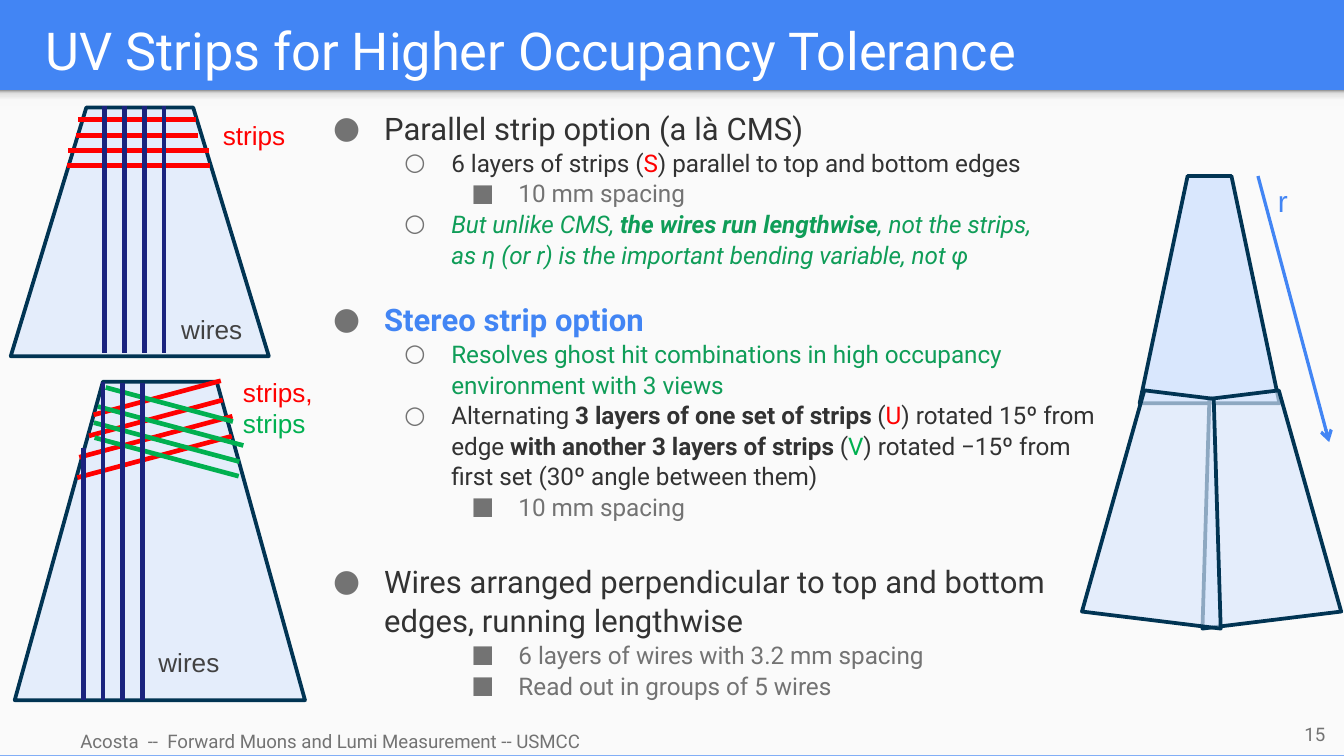
import math

import pptx
import pptx.dml.color
import pptx.enum.shapes
import pptx.enum.text
import pptx.oxml
import pptx.oxml.ns
import pptx.util
from lxml import etree
from pptx.util import Inches

COLOURS = {
    "blue": "4285F4", "paper": "FAFAFA", "white": "FFFFFF", "grey": "737373",
    "text": "323232", "label": "424242", "red": "FF0000", "green": "0F9D58",
    "strip_green": "00B050", "navy": "1A237E", "outline": "013453", "panel": "D9E7FD",
}
SHADOW_STOPS = [(0, "F9F9F9"), (36, "F9F9F9"), (80, "DEDEDE"), (100, "999999")]
SHAPES = pptx.enum.shapes.MSO_SHAPE
ANCHORS = pptx.enum.text.MSO_ANCHOR
BULLETS = [("●", 0.5, -0.38, 16.65), ("○", 1, -0.35, 13), ("■", 1.5, -0.35, 13)]

# Each point: level, space before in points, spans of text with their format
POINTS = [
    (0, 0, [("Parallel strip option (a là CMS)", {})]),
    (1, 0, [("6 layers of strips (", {}), ("S", {"colour": "red"}),
            (") parallel to top and bottom edges", {})]),
    (2, 0, [("10 mm spacing", {"colour": "grey"})]),
    (1, 0, [("But unlike CMS, ", {"colour": "green", "italic": True}),
            ("the wires run lengthwise", {"colour": "green", "italic": True, "bold": True}),
            (", not the strips, \nas η (or r) is the important bending variable, not φ",
             {"colour": "green", "italic": True})]),
    (0, 16, [("Stereo strip option", {"colour": "blue", "bold": True})]),
    (1, 0, [("Resolves ghost hit combinations in high occupancy environment with 3 views",
             {"colour": "green"})]),
    (1, 0, [("Alternating ", {}), ("3 layers of one set of strips ", {"bold": True}),
            ("(", {}), ("U", {"colour": "red"}), (") rotated 15º from edge ", {}),
            ("with another 3 layers of strips ", {"bold": True}),
            ("(", {}), ("V", {"colour": "strip_green"}),
            (") rotated −15º from first set (30º angle between them)", {})]),
    (2, 0, [("10 mm spacing", {"colour": "grey"})]),
    (0, 21, [("Wires arranged perpendicular to top and bottom edges, running lengthwise", {})]),
    (2, 0, [("6 layers of wires with 3.2 mm spacing", {"colour": "grey"})]),
    (2, 0, [("Read out in groups of 5 wires", {"colour": "grey"})]),
]


def rgb(name):
    return pptx.dml.color.RGBColor.from_string(COLOURS[name])


def add_text(para, text, size=14, colour="text", font="Roboto", bold=False, italic=False):
    for index, line in enumerate(text.split("\n")):
        if index:
            para.add_line_break()
        span = para.add_run()
        span.text = line
        span.font.name, span.font.size = font, pptx.util.Pt(size)
        span.font.bold, span.font.italic = bold, italic
        span.font.color.rgb = rgb(colour)


def set_frame(frame, margin=0.1, anchor=ANCHORS.TOP):
    frame.word_wrap = True
    frame.auto_size = pptx.enum.text.MSO_AUTO_SIZE.NONE
    frame.vertical_anchor = anchor
    frame.margin_left = frame.margin_right = Inches(0.1)
    frame.margin_top = frame.margin_bottom = Inches(margin)
    return frame.paragraphs[0]


def add_box(page, box, spans, margin=0.1, anchor=ANCHORS.TOP, align=None):
    shape = page.shapes.add_textbox(*map(Inches, box))
    para = set_frame(shape.text_frame, margin, anchor)
    para.alignment = align
    for text, style in spans:
        add_text(para, text, **style)


def add_label(page, box, *spans, size=14):
    add_box(page, box, [(text, {"colour": colour, "font": "Arial", "size": size})
                        for text, colour in spans], margin=0.05)


def add_block(page, kind, box):
    shape = page.shapes.add_shape(kind, *map(Inches, box))
    shape.shadow.inherit = False
    return shape


def add_line(page, start, end, colour, width=2.5):
    line = page.shapes.add_connector(pptx.enum.shapes.MSO_CONNECTOR.STRAIGHT,
                                     *map(Inches, (*start, *end)))
    line.line.color.rgb = rgb(colour)
    line.line.width = pptx.util.Pt(width)
    etree.SubElement(line._element.spPr, pptx.oxml.ns.qn("a:effectLst"))
    return line


def add_panel(page, box, taper=0.25, opacity=65, turn=0):
    panel = add_block(page, SHAPES.TRAPEZOID, box)
    panel.adjustments[0] = taper
    panel.rotation = turn
    panel.fill.solid()
    panel.fill.fore_color.rgb = rgb("panel")
    panel.line.color.rgb = rgb("outline")
    panel.line.width = pptx.util.Pt(2)
    colour = panel._element.spPr.find(".//" + pptx.oxml.ns.qn("a:srgbClr"))
    etree.SubElement(colour, pptx.oxml.ns.qn("a:alpha"), val=str(opacity * 1000))


def add_strips(page, box, strips, colour, angle=0):
    """Draw strips given as centre x, centre y and length, tilted clockwise by angle."""
    for x, y, length in strips:
        across = length / 2 * math.cos(math.radians(angle))
        down = length / 2 * math.sin(math.radians(angle))
        x, y = box[0] + x, box[1] + y
        add_line(page, (x - across, y - down), (x + across, y + down), colour)


def add_wires(page, box, first, last, tops, bottom):
    gap = (last - first) / (len(tops) - 1)
    for index, top in enumerate(tops):
        x = box[0] + first + index * gap
        add_line(page, (x, box[1] + top), (x, box[1] + bottom), "navy")


def add_parallel_chamber(page, box):
    left, top = box[:2]
    add_panel(page, box, taper=0.304)
    add_strips(page, box, [(0.94, 0.09, 0.88), (0.94, 0.21, 0.91),
                           (0.95, 0.32, 1.05), (0.95, 0.43, 1.06)], "red")
    add_wires(page, box, 0.7, 1.14, [-0.01] * 4, 1.83)
    add_label(page, (left + 1.48, top + 0.04, 0.72, 0.34), ("strips", "red"))
    add_label(page, (left + 1.17, top + 1.48, 0.72, 0.34), ("wires", "label"))


def add_stereo_chamber(page, box):
    left, top = box[:2]
    add_panel(page, box, taper=0.304)
    add_strips(page, box, [(1.06, 0.12, 0.98), (1.05, 0.27, 1.03),
                           (1.05, 0.41, 1.18), (1.04, 0.56, 1.19)], "red", -15)
    add_strips(page, box, [(1.15, 0.17, 0.98), (1.16, 0.33, 1.12),
                           (1.13, 0.45, 1.12), (1.13, 0.56, 1.11)], "strip_green", 15)
    add_wires(page, box, 0.51, 0.95, [0.49, 0, 0.01, 0.01], 2.37)
    add_label(page, (left + 1.6, top - 0.09, 0.83, 0.57),
              ("strips, ", "red"), ("strips", "strip_green"))
    add_label(page, (left + 0.97, top + 1.92, 0.72, 0.34), ("wires", "label"))


def add_sector(page, box):
    """Draw one inner panel, two tilted outer panels and the radial arrow."""
    left, top = box[:2]
    width, height = 1.04, 1.69
    add_panel(page, (left + 0.33, top, width, height), taper=0.343, opacity=100)
    add_panel(page, (left + 0.69, top + 1.62, width, height), turn=-7)
    add_panel(page, (left, top + 1.62, width, height), turn=7)
    arrow = add_line(page, (left + 1.21, top), (left + 1.74, top + 1.98), "blue", 1.75)
    outline = arrow.line._get_or_add_ln()
    etree.SubElement(outline, pptx.oxml.ns.qn("a:tailEnd"), type="arrow")
    add_label(page, (left + 1.26, top, 0.21, 0.37), ("r", "blue"), size=16)


def add_points(page, box):
    frame = page.shapes.add_textbox(*map(Inches, box)).text_frame
    para = set_frame(frame)
    for index, (level, before, spans) in enumerate(POINTS):
        if index:
            para = frame.add_paragraph()
        mark, indent, hang, size = BULLETS[level]
        para.level, para.line_spacing = level, 1.05
        para.space_before = pptx.util.Pt(before)
        props = para._p.get_or_add_pPr()
        props.set("marL", str(Inches(indent)))
        props.set("indent", str(Inches(hang)))
        tint = etree.SubElement(props, pptx.oxml.ns.qn("a:buClr"))
        etree.SubElement(tint, pptx.oxml.ns.qn("a:srgbClr"), val=COLOURS["grey"])
        etree.SubElement(props, pptx.oxml.ns.qn("a:buFont"), typeface="Roboto")
        etree.SubElement(props, pptx.oxml.ns.qn("a:buChar"), char=mark)
        for text, style in spans:
            add_text(para, text, size=size, **style)


def add_backdrop(page):
    page.background.fill.solid()
    page.background.fill.fore_color.rgb = rgb("blue")
    paper = add_block(page, SHAPES.RECTANGLE, (0, 0.7, 10, 4.92))
    paper.fill.solid()
    paper.fill.fore_color.rgb = rgb("paper")
    paper.line.fill.background()
    shade = add_block(page, SHAPES.RECTANGLE, (0, 0.67, 10, 0.12))
    shade.line.fill.background()
    shade.fill.gradient()
    shade.fill.gradient_angle = 90
    stops = shade._element.spPr.find(".//" + pptx.oxml.ns.qn("a:gsLst"))
    for stop in list(stops):
        stops.remove(stop)
    for place, colour in SHADOW_STOPS:
        stop = etree.SubElement(stops, pptx.oxml.ns.qn("a:gs"), pos=str(place * 1000))
        etree.SubElement(stop, pptx.oxml.ns.qn("a:srgbClr"), val=colour)


def add_title(page, box, text):
    title = page.shapes.title
    title.left, title.top, title.width, title.height = map(Inches, box)
    para = set_frame(title.text_frame, anchor=ANCHORS.BOTTOM)
    para.alignment = pptx.enum.text.PP_ALIGN.LEFT
    add_text(para, text, size=28, colour="white")


def main():
    deck = pptx.Presentation()
    deck.slide_width = Inches(10)
    deck.slide_height = deck.slide_width * 9 // 16
    page = deck.slides.add_slide(deck.slide_layouts[5])
    small = {"size": 10, "colour": "grey"}
    add_backdrop(page)
    add_title(page, (0.24, 0, 9.51, 0.7), "UV Strips for Higher Occupancy Tolerance")
    add_box(page, (0.5, 5.33, 3.97, 0.37),
            [("Acosta  --  Forward Muons and Lumi Measurement -- USMCC", small)])
    add_points(page, (2.26, 0.7, 6.13, 4.86))
    add_box(page, (9.36, 5.25, 0.6, 0.43), [("15", small)], anchor=ANCHORS.MIDDLE,
            align=pptx.enum.text.PP_ALIGN.RIGHT)
    add_sector(page, (8.15, 1.31, 1.74, 3.31))
    add_stereo_chamber(page, (0.11, 2.84, 2.16, 2.37))
    add_parallel_chamber(page, (0.08, 0.8, 1.92, 1.85))
    deck.save("out.pptx")


if __name__ == "__main__":
    main()
